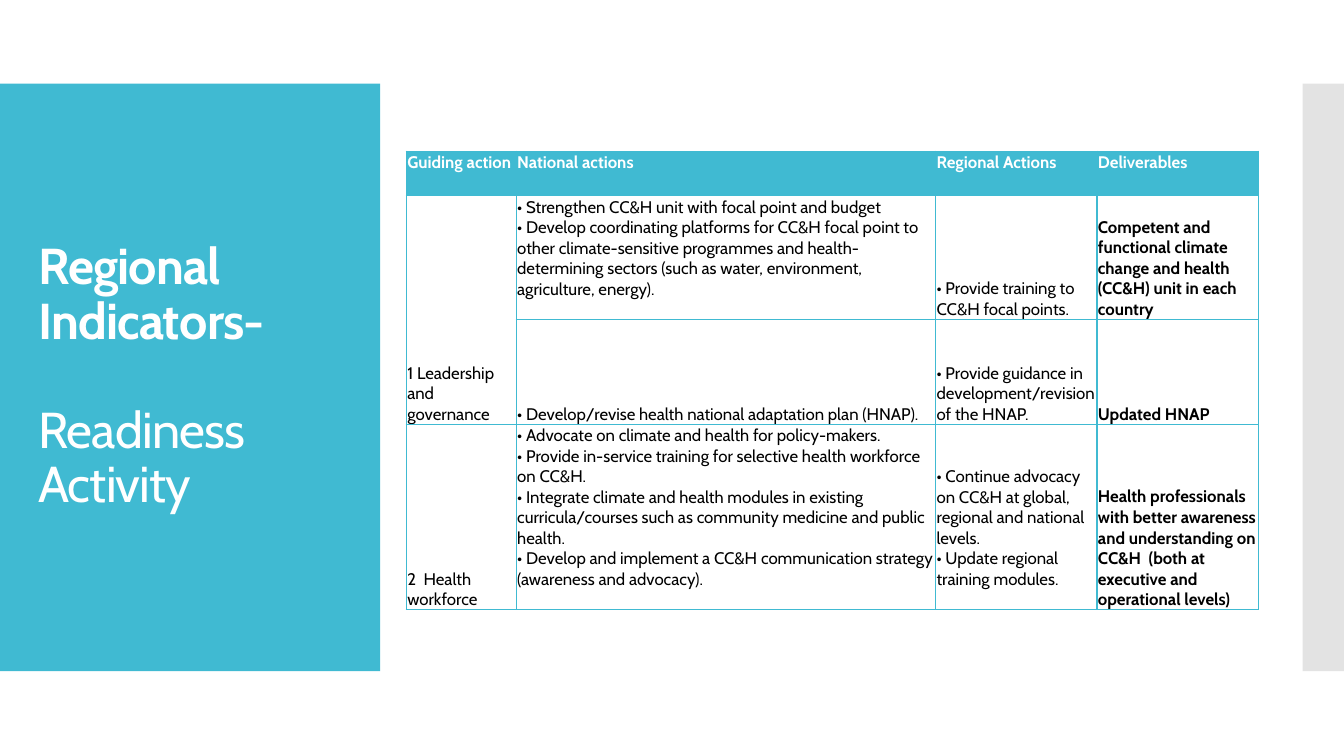
from lxml import etree
from pptx import Presentation
from pptx.dml.color import RGBColor
from pptx.enum.shapes import MSO_SHAPE
from pptx.enum.text import MSO_ANCHOR, MSO_AUTO_SIZE, PP_ALIGN
from pptx.oxml import parse_xml
from pptx.oxml.ns import nsdecls, qn
from pptx.util import Inches, Pt

# Content: each cell is a list of paragraphs
TITLE = [("Regional Indicators-", True), ("Readiness Activity", False)]
HEADER = [["Guiding action"], ["National actions"], ["Regional Actions"], ["Deliverables"]]
ACTIONS = [
    [["1 Leadership and governance"],
     ["• Strengthen CC&H unit with focal point and budget",
      "• Develop coordinating platforms for CC&H focal point to other "
      "climate-sensitive programmes and health-determining sectors "
      "(such as water, environment, agriculture, energy)."],
     ["• Provide training to CC&H focal points."],
     ["Competent and functional climate change and health (CC&H) unit in each country"]],
    [[],
     ["• Develop/revise health national adaptation plan (HNAP)."],
     ["• Provide guidance in development/revision of the HNAP."],
     ["Updated HNAP"]],
    [["2  Health workforce"],
     ["• Advocate on climate and health for policy-makers.",
      "• Provide in-service training for selective health workforce on CC&H.",
      "• Integrate climate and health modules in existing curricula/courses "
      "such as community medicine and public health.",
      "• Develop and implement a CC&H communication strategy (awareness and advocacy)."],
     ["• Continue advocacy on CC&H at global, regional and national levels.",
      "• Update regional training modules."],
     ["Health professionals with better awareness and understanding on CC&H  "
      "(both at executive and operational levels)"]],
]
COLUMN_WIDTHS = [1.09, 4.16, 1.6, 1.6]
ROW_HEIGHTS = [0.44, 1.23, 1.04, 1.84]
DELIVERABLES = 3

FONT = "Cabin"
TEAL = RGBColor(0x40, 0xBA, 0xD2)
GREY = RGBColor(0xC8, 0xC8, 0xC8)
WHITE = RGBColor(0xFF, 0xFF, 0xFF)
BLACK = RGBColor(0, 0, 0)


def style_run(run, size, color, bold):
    run.font.name = FONT
    run.font.size = Pt(size)
    run.font.color.rgb = color
    run.font.bold = bold


def add_band(slide, left, width, color):
    band = slide.shapes.add_shape(MSO_SHAPE.RECTANGLE, Inches(left), Inches(0.83),
                                  Inches(width), Inches(5.83))
    band.shadow.inherit = False
    band.fill.solid()
    band.fill.fore_color.rgb = color
    band.line.fill.background()
    return band


def set_borders(cell):
    properties = cell._tc.get_or_add_tcPr()
    for index, side in enumerate(("lnL", "lnR", "lnT", "lnB")):
        properties.insert(index, parse_xml(
            f'<a:{side} {nsdecls("a")} w="{Pt(1)}"><a:solidFill>'
            f'<a:srgbClr val="{TEAL}"/></a:solidFill></a:{side}>'))


def fill_cell(cell, paragraphs, is_header, bold):
    cell.margin_left = cell.margin_right = cell.margin_top = Inches(0.01)
    # Cells with a list keep one line free below it
    cell.margin_bottom = Inches(0.2 if len(paragraphs) > 1 else 0)
    cell.vertical_anchor = MSO_ANCHOR.TOP if is_header else MSO_ANCHOR.BOTTOM
    if is_header:
        cell.fill.solid()
        cell.fill.fore_color.rgb = TEAL
    else:
        cell.fill.background()
    set_borders(cell)
    cell.text_frame.text = "\n".join(paragraphs)
    for paragraph in cell.text_frame.paragraphs:
        for run in paragraph.runs:
            style_run(run, 12, WHITE if is_header else BLACK, bold)


def main():
    prs = Presentation()
    prs.slide_width, prs.slide_height = Inches(13.33), Inches(7.5)
    slide = prs.slides.add_slide(prs.slide_layouts[5])

    # Side bands, placed behind the title
    title = slide.shapes.title
    add_band(slide, 0, 3.77, TEAL)
    grey_band = add_band(slide, 12.92, 0.41, GREY)
    grey_color = grey_band._element.spPr.find(qn("a:solidFill"))[0]
    etree.SubElement(grey_color, qn("a:alpha"), val="50000")
    slide.shapes._spTree.append(title._element)

    # Title
    title.left, title.top = Inches(0.28), Inches(1.23)
    title.width, title.height = Inches(3.22), Inches(5.03)
    frame = title.text_frame
    frame.text = "\n".join(text for text, _ in TITLE)
    frame.word_wrap = True
    frame.auto_size = MSO_AUTO_SIZE.NONE
    frame.vertical_anchor = MSO_ANCHOR.MIDDLE
    for paragraph, (_, bold) in zip(frame.paragraphs, TITLE):
        paragraph.alignment = PP_ALIGN.LEFT
        paragraph.line_spacing = 0.9
        run = paragraph.runs[0]
        style_run(run, 36, WHITE, bold)
        run.font._element.set("spc", "-60")
    frame.paragraphs[1].space_before = Pt(39)

    # Table of actions
    rows = [HEADER] + ACTIONS
    table = slide.shapes.add_table(
        len(rows), len(HEADER), Inches(4.03), Inches(1.5),
        Inches(sum(COLUMN_WIDTHS)), Inches(sum(ROW_HEIGHTS))).table
    table.horz_banding = False
    for column, width in zip(table.columns, COLUMN_WIDTHS):
        column.width = Inches(width)
    for row, height in zip(table.rows, ROW_HEIGHTS):
        row.height = Inches(height)
    for r, row in enumerate(rows):
        for c, paragraphs in enumerate(row):
            fill_cell(table.cell(r, c), paragraphs, r == 0, r == 0 or c == DELIVERABLES)
    table.cell(1, 0).merge(table.cell(2, 0))

    prs.save("out.pptx")


if __name__ == "__main__":
    main()
